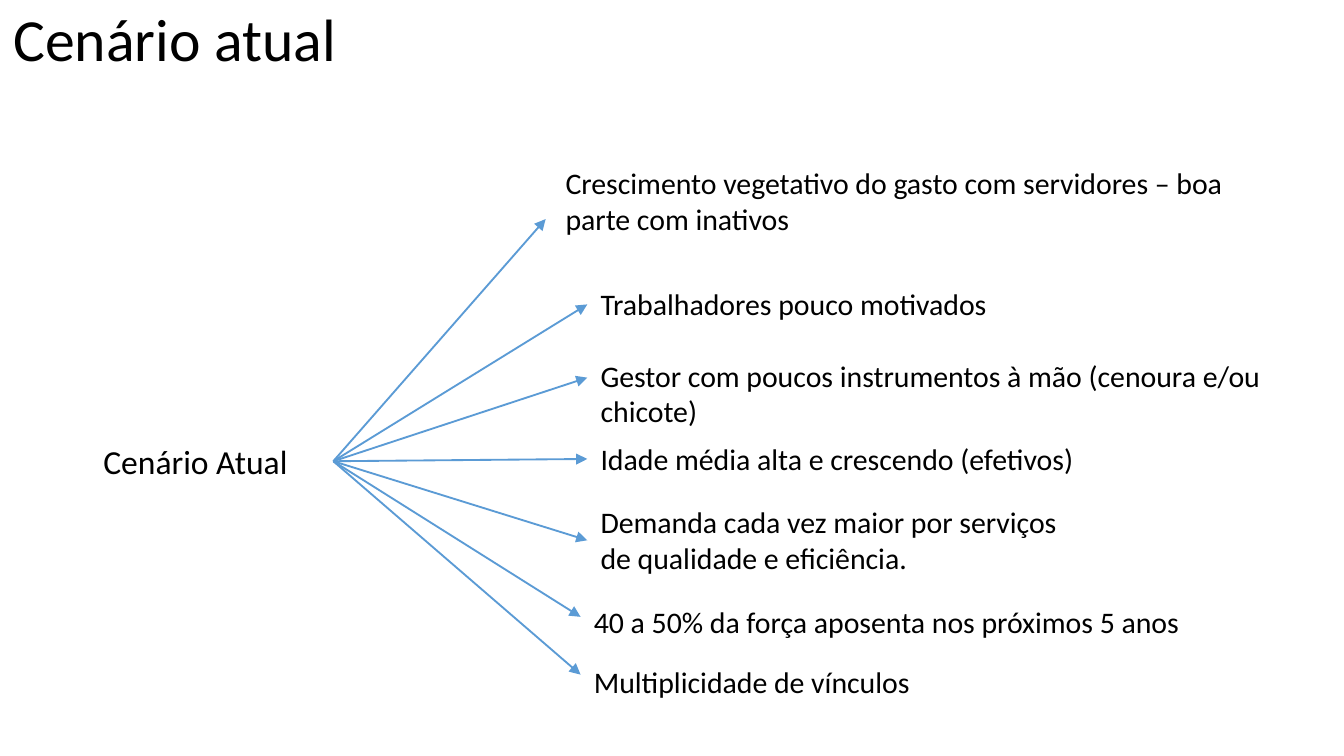
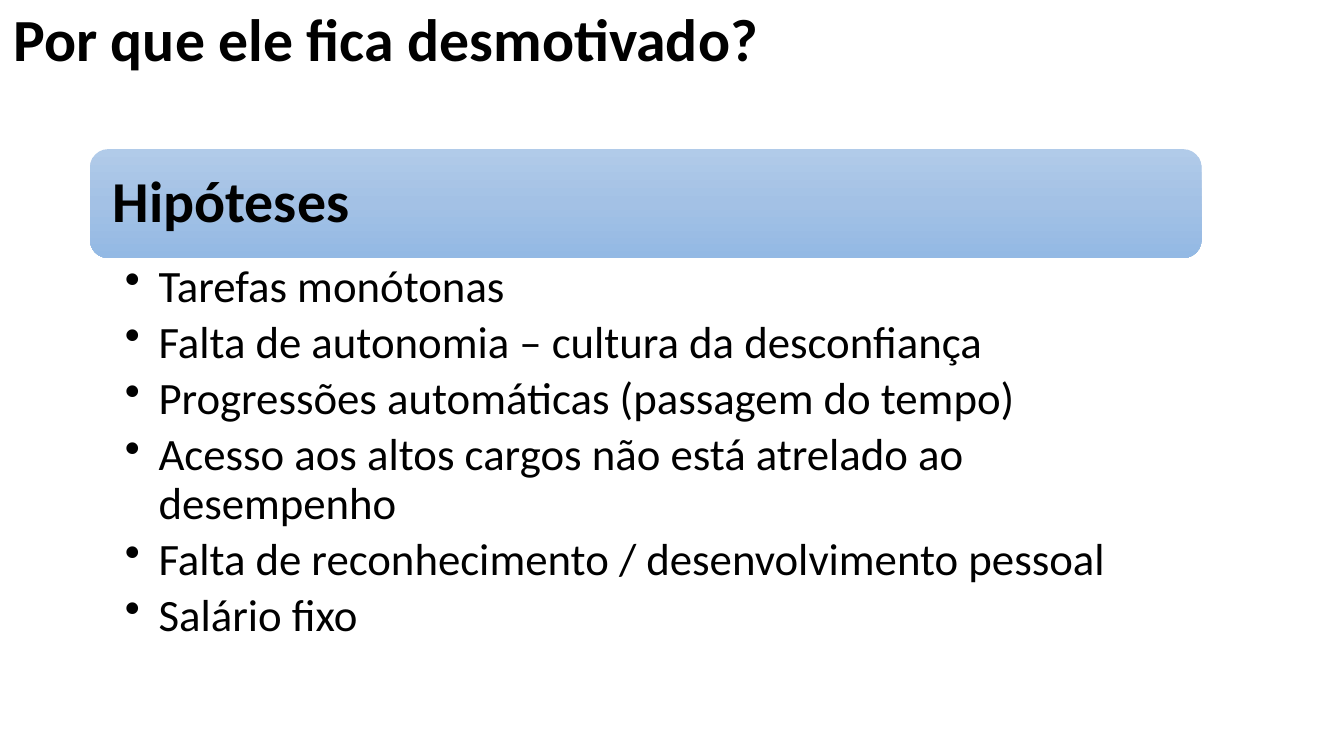
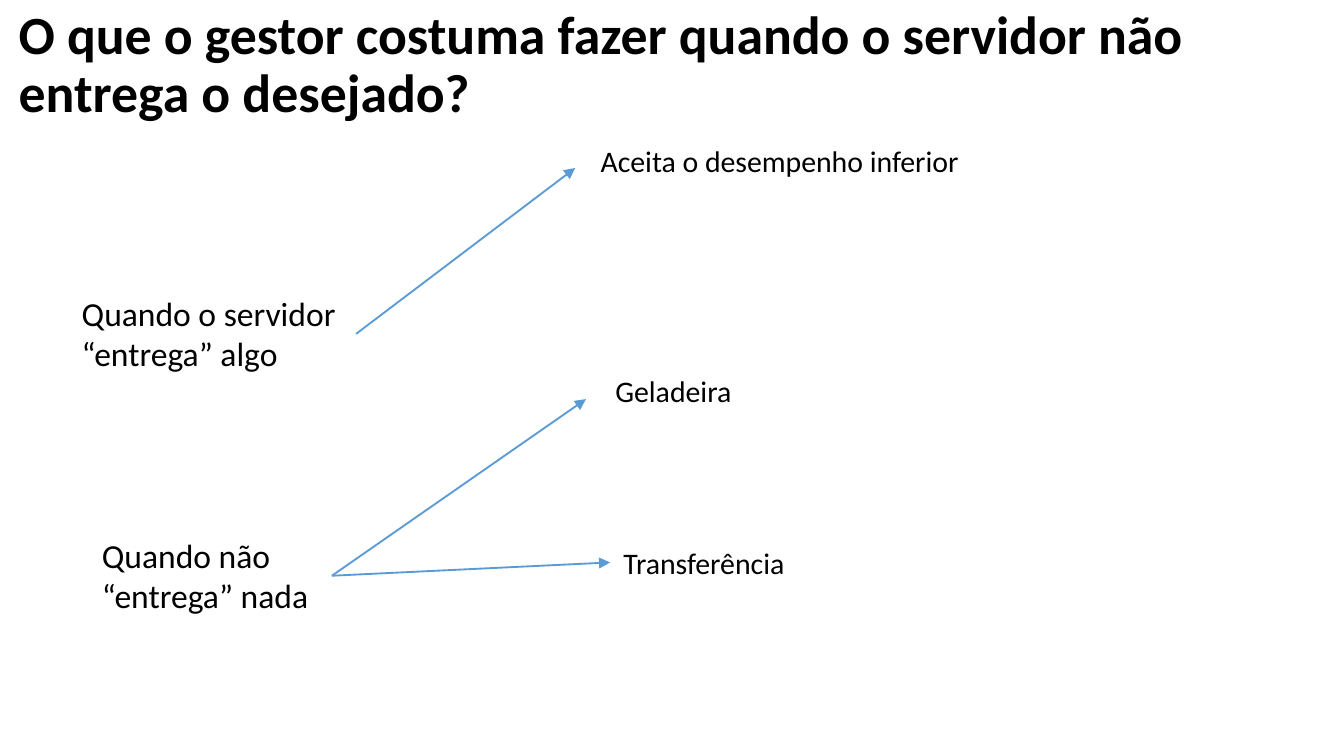
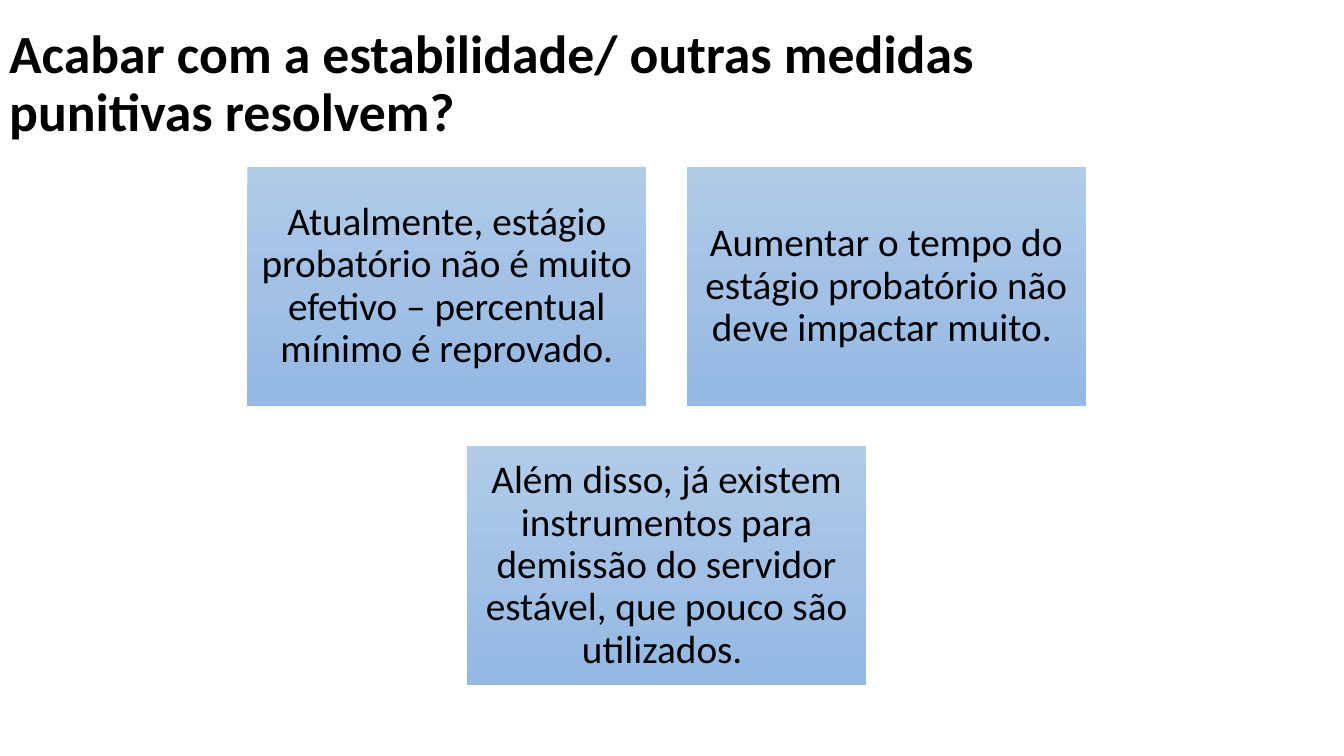
from copy import deepcopy
from dataclasses import dataclass

from lxml.etree import SubElement
from pptx import Presentation
from pptx.dml.color import RGBColor
from pptx.enum.shapes import MSO_CONNECTOR, MSO_SHAPE
from pptx.enum.text import MSO_ANCHOR, MSO_AUTO_SIZE, PP_ALIGN
from pptx.oxml.ns import qn
from pptx.util import Emu, Inches, Pt


@dataclass(frozen=True)
class Theme:
    font: str = "Calibri"
    text: RGBColor = RGBColor(0, 0, 0)
    arrow: RGBColor = RGBColor(0x5B, 0x9B, 0xD5)
    gradient: tuple = ("B1CBE9", "A3C1E5", "93B9E4")
    title: float = 32
    long_title: float = 28.8
    banner: float = 31
    bullet: float = 24
    card: float = 21
    label: float = 18
    branch: float = 16
    tight: float = 0.9


THEME = Theme()
SLIDE_WIDTH, SLIDE_HEIGHT = Inches(10), Inches(5.625)
LEFT, TOP, RIGHT, BOTTOM = 1, 0, 3, 2  # connection sites of a rectangle


def grid(*units):
    """Turn grid units into lengths: 100 square units span the slide's width."""
    return [Emu(round(unit * SLIDE_WIDTH / 100)) for unit in units]


# Text
def style(paragraph, size, bold=False, spacing=None):
    paragraph.line_spacing = spacing
    font = paragraph.font
    font.name, font.size, font.bold = THEME.font, Pt(size), bold
    font.color.rgb = THEME.text


def set_margins(frame, left, top, right, bottom):
    (frame.margin_left, frame.margin_top,
     frame.margin_right, frame.margin_bottom) = grid(left, top, right, bottom)


def add_text(slide, text, area, size, **options):
    box = slide.shapes.add_textbox(*grid(*area))
    box.text_frame.word_wrap = True
    paragraph = box.text_frame.paragraphs[0]
    paragraph.text = text
    style(paragraph, size, **options)
    return box


def add_title(slide, text, left=0, top=0, width=77.2, size=THEME.title, bold=True):
    box = add_text(slide, text, (left, top, width, 6.3), size,
                   bold=bold, spacing=THEME.tight)
    box.text_frame.vertical_anchor = MSO_ANCHOR.MIDDLE


def add_label(slide, text, left, top, width, lines=1, size=THEME.label):
    height = 1 + lines * size * 0.169
    box = add_text(slide, text, (left, top, width, height), size)
    box.text_frame.auto_size = MSO_AUTO_SIZE.SHAPE_TO_FIT_TEXT
    return box


def add_bullets(slide, items, area):
    box = slide.shapes.add_textbox(*grid(*area))
    frame = box.text_frame
    frame.word_wrap = True
    set_margins(frame, 2.6, 0.4, 2.4, 0.4)
    for index, item in enumerate(items):
        paragraph = frame.add_paragraph() if index else frame.paragraphs[0]
        paragraph.text = item
        paragraph.level = 1
        properties = paragraph._p.get_or_add_pPr()
        indent = Inches(0.25)
        properties.set("marL", str(indent))
        properties.set("indent", str(-indent))
        SubElement(properties, qn("a:buChar")).set("char", "•")
        paragraph.space_after = Pt(4.2)
        style(paragraph, THEME.bullet, spacing=THEME.tight)


# Panels and arrows
def add_panel(slide, kind, text, area, size, margin, align, bold=False):
    panel = slide.shapes.add_shape(kind, *grid(*area))
    panel.shadow.inherit = False
    panel.line.fill.background()
    panel.fill.gradient()
    panel.fill.gradient_angle = 270
    stops = panel._element.spPr.find(".//" + qn("a:gsLst"))
    stops.insert(1, deepcopy(stops[0]))
    for index, (stop, color) in enumerate(zip(panel.fill.gradient_stops, THEME.gradient)):
        stop.position = index / 2
        stop.color.rgb = RGBColor.from_string(color)
    frame = panel.text_frame
    frame.word_wrap = True
    frame.vertical_anchor = MSO_ANCHOR.MIDDLE
    set_margins(frame, *[margin] * 4)
    paragraph = frame.paragraphs[0]
    paragraph.text = text
    paragraph.alignment = align
    style(paragraph, size, bold, THEME.tight)


def add_arrow(slide, source, target, tip=None):
    """Run from the source's right side to the tip, or else join the target's left side."""
    end = grid(*tip) if tip else (target.left, target.top + target.height // 2)
    arrow = slide.shapes.add_connector(
        MSO_CONNECTOR.STRAIGHT, source.left + source.width,
        source.top + source.height // 2, *end)
    arrow.begin_connect(source, RIGHT)
    if not tip:
        arrow.end_connect(target, LEFT)
    arrow.line.color.rgb = THEME.arrow
    arrow.line.width = Pt(1)
    SubElement(arrow.line._get_or_add_ln(), qn("a:tailEnd")).set("type", "triangle")
    SubElement(arrow._element.spPr, qn("a:effectLst"))


def add_fan(slide, source, branches):
    """Each branch: text, left, top, width, lines, arrow tip (None joins the box)."""
    for text, left, top, width, lines, tip in branches:
        target = add_label(slide, text, left, top, width, lines, THEME.branch)
        add_arrow(slide, source, target, tip)


# Slides
def build_scenario(slide):
    add_title(slide, "Cenário atual", bold=False)
    scenario = add_label(slide, "Cenário Atual", 6.7, 32.3, 18.1)
    add_fan(slide, scenario, [
        ("Crescimento vegetativo do gasto com servidores – boa parte com inativos",
         41.1, 11.8, 55.4, 2, (40.6, 16.3)),
        ("Trabalhadores pouco motivados", 43.7, 20.8, 36.2, 1, None),
        ("Gestor com poucos instrumentos à mão (cenoura e/ou chicote)",
         43.7, 26.1, 52.8, 2, (43.7, 28.1)),
        ("Idade média alta e crescendo (efetivos)", 43.7, 32.3, 48, 1, None),
        ("Demanda cada vez maior por serviços de qualidade e eficiência.",
         43.7, 37, 36.2, 2, None),
        ("40 a 50% da força aposenta nos próximos 5 anos",
         43.2, 44.4, 51.2, 2, (43.2, 45.9)),
        ("Multiplicidade de vínculos", 43.2, 48.9, 51.2, 2, (43.2, 50.2)),
    ])


def build_hypotheses(slide):
    add_title(slide, "Por que ele fica desmotivado?")
    left, top, width, height = 6.7, 11.1, 82.7, 8.1
    add_panel(slide, MSO_SHAPE.ROUNDED_RECTANGLE, "Hipóteses",
              (left, top, width, height), THEME.banner, 1.3, PP_ALIGN.LEFT, bold=True)
    add_bullets(slide, [
        "Tarefas monótonas",
        "Falta de autonomia – cultura da desconfiança",
        "Progressões automáticas (passagem do tempo)",
        "Acesso aos altos cargos não está atrelado ao desempenho",
        "Falta de reconhecimento / desenvolvimento pessoal",
        "Salário fixo",
    ], (left, top + height, width, 30.9))


def build_manager_reactions(slide):
    add_title(slide, "O que o gestor costuma fazer quando o servidor não entrega o desejado?",
              0.4, 1.8, 92.1, THEME.long_title)
    some_delivery = add_label(slide, "Quando o servidor “entrega” algo", 5.1, 21.3, 21.4, 2)
    add_fan(slide, some_delivery, [
        ("Aceita o desempenho inferior", 43.7, 10.1, 37.8, 1, (42.8, 12.5)),
    ])
    no_delivery = add_label(slide, "Quando não “entrega” nada", 6.6, 39.3, 18.1, 2)
    add_fan(slide, no_delivery, [
        ("Geladeira", 44.8, 27.2, 16.5, 1, (43.6, 29.7)),
        ("Transferência", 45.4, 40, 52.8, 1, None),
    ])


def build_punitive_measures(slide):
    add_title(slide, "Acabar com a estabilidade/ outras medidas punitivas resolvem?",
              -0.3, 3.2, size=THEME.long_title)
    card_rows = [
        ["Atualmente, estágio probatório não é muito efetivo – percentual mínimo é reprovado.",
         "Aumentar o tempo do estágio probatório não deve impactar muito. "],
        ["Além disso, já existem instrumentos para demissão do servidor estável, "
         "que pouco são utilizados. "],
    ]
    width, height, gap, center, top = 29.7, 17.8, 3, 49.6, 12.4
    for row, cards in enumerate(card_rows):
        left = center - (len(cards) * (width + gap) - gap) / 2
        for column, text in enumerate(cards):
            area = (left + column * (width + gap), top + row * (height + gap), width, height)
            add_panel(slide, MSO_SHAPE.RECTANGLE, text, area, THEME.card, 0.9,
                      PP_ALIGN.CENTER)


def main():
    presentation = Presentation()
    presentation.slide_width, presentation.slide_height = SLIDE_WIDTH, SLIDE_HEIGHT
    blank = presentation.slide_layouts[6]
    for build in (build_scenario, build_hypotheses,
                  build_manager_reactions, build_punitive_measures):
        build(presentation.slides.add_slide(blank))
    presentation.save("out.pptx")


if __name__ == "__main__":
    main()
